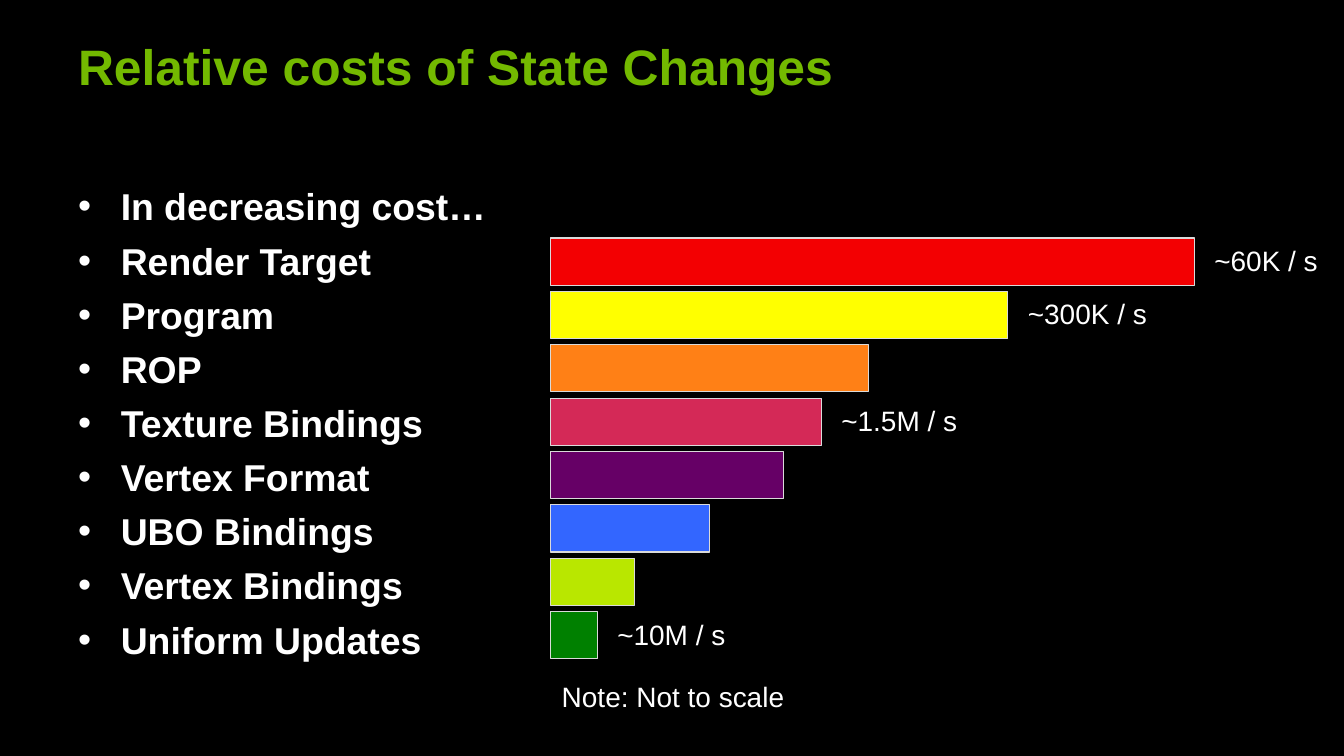
import pptx
import pptx.dml.color
import pptx.enum.shapes
import pptx.util
import lxml.etree
import pptx.oxml.ns

Cm, Pt = pptx.util.Cm, pptx.util.Pt

# Content
TITLE = "Relative costs of State Changes"
LEAD = "In decreasing cost…"
NOTE = "Note: Not to scale"
# Name, bar width in cm, fill, rate, rate box width in cm
COSTS = [
    ("Render Target", 14.6, "F30002", "~60K / s", 3),
    ("Program", 10.37, "FFFF00", "~300K / s", 3.6),
    ("ROP", 7.2, "FF8016", None, 0),
    ("Texture Bindings", 6.14, "D42957", "~1.5M / s", 3.6),
    ("Vertex Format", 5.29, "660066", None, 0),
    ("UBO Bindings", 3.6, "3366FF", None, 0),
    ("Vertex Bindings", 1.9, "B9E700", None, 0),
    ("Uniform Updates", 1.06, "008000", "~10M / s", 3.4),
]

# Bar grid, in cm
LEFT, TOP, STEP, HIGH = 12.49, 5.4, 1.21, 1.07
GAP = 0.2
INDENT = Cm(0.97)
FACE = "Arial"

deck = pptx.Presentation()
deck.slide_width, deck.slide_height = Cm(30.48), Cm(17.145)
slide = deck.slides.add_slide(deck.slide_layouts[6])


def color(code):
    return pptx.dml.color.RGBColor.from_string(code)


def bullet(para):
    props = para._p.get_or_add_pPr()
    props.set("marL", str(INDENT))
    props.set("indent", str(-INDENT))
    for tag, key, value in (("a:buFont", "typeface", FACE),
                            ("a:buChar", "char", "•")):
        mark = lxml.etree.SubElement(props, pptx.oxml.ns.qn(tag))
        mark.set(key, value)


def write(text, x, y, w, h, size=18, bold=False, ink="FFFFFF",
          wrap=False, dots=False, space=0):
    frame = slide.shapes.add_textbox(Cm(x), Cm(y), Cm(w), Cm(h)).text_frame
    frame.word_wrap = wrap
    frame.text = text
    for i, para in enumerate(frame.paragraphs):
        if dots:
            bullet(para)
        if i and space:
            para.space_before = Pt(space)
        font = para.font
        font.name, font.size, font.bold = FACE, Pt(size), bold
        font.color.rgb = color(ink)


def bar(x, y, w, h, fill):
    rect = slide.shapes.add_shape(
        pptx.enum.shapes.MSO_SHAPE.RECTANGLE, Cm(x), Cm(y), Cm(w), Cm(h))
    rect.shadow.inherit = False
    rect.fill.solid()
    rect.fill.fore_color.rgb = color(fill)
    rect.line.color.rgb = color("DADADA")
    rect.line.width = Pt(0.75)


# Background, title and list
back = slide.background.fill
back.solid()
back.fore_color.rgb = color("000000")
write(TITLE, 1.52, 0.69, 25.58, 1.6, size=32, bold=True, ink="73B900",
      wrap=True)
names = [LEAD] + [cost[0] for cost in COSTS]
write("\n".join(names), 1.52, 4.04, 10.74, 11.7, size=24, bold=True,
      wrap=True, dots=True, space=6)

# Bars with their rates
for i, (name, wide, fill, rate, room) in enumerate(COSTS):
    y = TOP + i * STEP
    bar(LEFT, y, wide, HIGH, fill)
    if rate:
        write(rate, LEFT + wide + GAP, y, room, 1.02)

write(NOTE, LEFT, 15.29, 5.8, 1.02)

deck.save("out.pptx")
